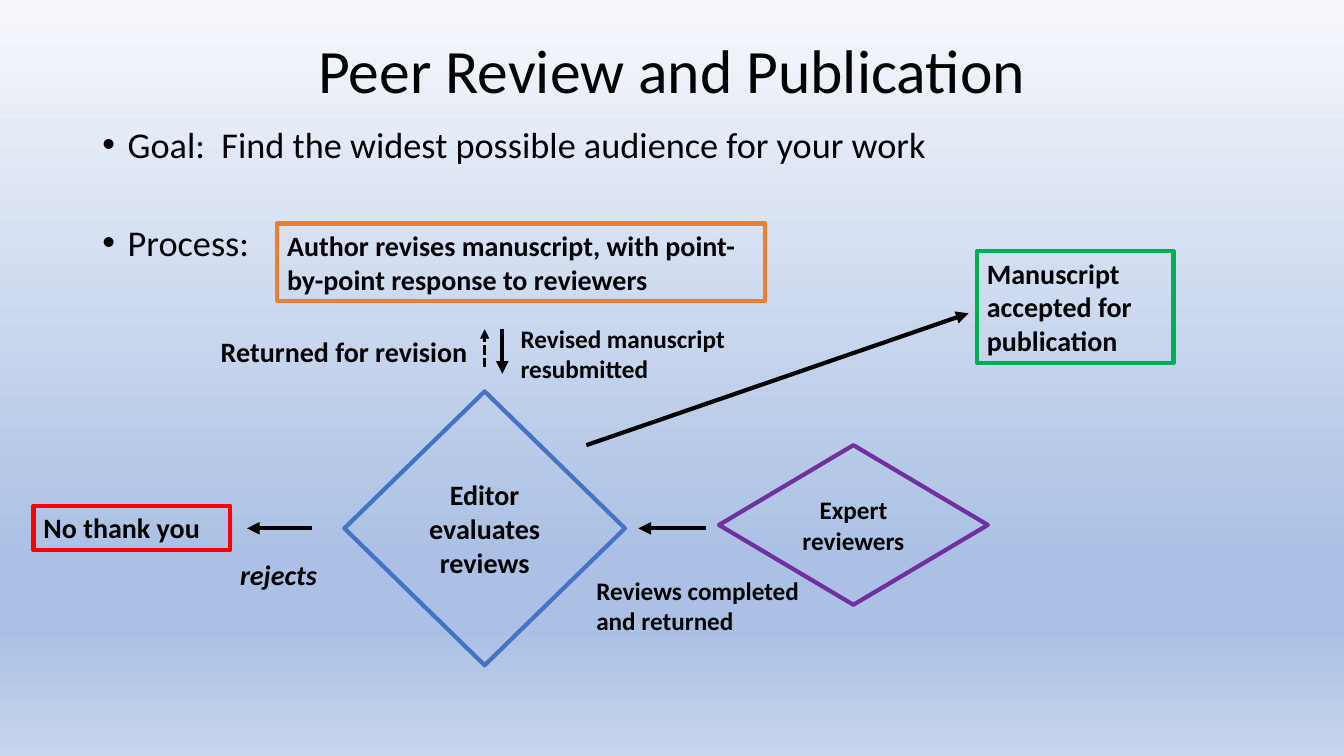
from copy import deepcopy

from lxml import etree
from pptx import Presentation
from pptx import util as u
from pptx.dml.color import RGBColor
from pptx.enum import dml, shapes, text
from pptx.oxml.ns import qn

FONT = "Calibri"
COLOURS = {
    "ink": "000000", "author": "ED7D31", "editor": "4472C4",
    "reject": "FF0000", "expert": "7030A0", "accept": "00B050",
}
SKY = [(0, "F6F8FC"), (0.74, "ABC0E4"), (0.83, "ABC0E4"), (1, "C7D5ED")]
COLUMNS, ROWS = 160, 90
SLIDE_WIDTH, SLIDE_HEIGHT = u.Inches(13.33), u.Inches(7.5)

RECT, DIAMOND = shapes.MSO_SHAPE.RECTANGLE, shapes.MSO_SHAPE.DIAMOND
STEPS = [
    (RECT, "author", 20, (33, 0.6, 58.1, 9.2),
     "Author revises manuscript, with point-by-point response to reviewers"),
    (DIAMOND, "editor", 20, (41, 20.6, 33.4, 32.6), "Editor evaluates reviews"),
    (RECT, "reject", 20, (4, 34.2, 23.4, 5.3), "No thank you"),
    (DIAMOND, "expert", 18, (85.6, 27, 32, 19), "Expert reviewers"),
    (RECT, "accept", 20, (116.3, 3.9, 23.4, 13.3),
     "Manuscript accepted for publication"),
]
LABELS = [
    ("rejects", 20, True, False, (27.4, 39.8, 11.6, 5.3)),
    ("Reviews completed and returned", 18, False, True, (69.8, 41.9, 29.9, 8.5)),
    ("Returned for revision", 20, False, False, (25.1, 13.2, 32, 5.3)),
    ("Revised manuscript\nresubmitted", 18, False, False, (60.8, 11.9, 26.9, 8.5)),
]
ARROWS = [
    ((57.7, 17.7), (57.7, 13.2), True),
    ((37.1, 36.9), (29.4, 36.9), False),
    ((84, 36.9), (76, 36.9), False),
    ((69.8, 27), (115.3, 11.3), False),
    ((59.8, 13.2), (59.8, 18.5), False),
]


def colour(name):
    """Return the named colour."""
    return RGBColor.from_string(COLOURS[name])


def cells(column, row):
    """Turn a grid position into slide lengths."""
    return round(SLIDE_WIDTH * column / COLUMNS), round(SLIDE_HEIGHT * row / ROWS)


def placed(box, part):
    """Return the slide lengths of a part inside a grid box."""
    left, top, width, height = part
    return *cells(box[0] + left, box[1] + top), *cells(width, height)


def style(frame, size, bold=False, italic=False, align=None):
    """Format every run of a text frame."""
    for paragraph in frame.paragraphs:
        paragraph.alignment = align
        for run in paragraph.runs:
            run.font.name, run.font.size = FONT, u.Pt(size)
            run.font.bold, run.font.italic = bold, italic
            run.font.color.rgb = colour("ink")


def paint_background(slide):
    """Fill the slide with the vertical sky gradient."""
    fill = slide.background.fill
    fill.gradient()
    fill.gradient_angle = 270
    stop_list = next(slide.element.iter(qn("a:gsLst")))
    while len(stop_list) < len(SKY):
        stop_list.append(deepcopy(stop_list[0]))
    for stop, (position, shade) in zip(fill.gradient_stops, SKY):
        stop.position = position
        stop.color.rgb = RGBColor.from_string(shade)


def fill_title(slide, box):
    """Set the slide title in its box."""
    title = slide.shapes.title
    title.left, title.top, title.width, title.height = placed(box, (0, 0, *box[2:]))
    frame = title.text_frame
    frame.text = "Peer Review and Publication"
    frame.vertical_anchor = text.MSO_ANCHOR.MIDDLE
    frame.auto_size = text.MSO_AUTO_SIZE.NONE
    style(frame, 44, align=text.PP_ALIGN.CENTER)
    frame.paragraphs[0].line_spacing = 0.9


def fill_points(slide, box):
    """Set the bulleted goal and process in their box."""
    points = slide.placeholders[1]
    points.left, points.top, points.width, points.height = placed(box, (0, 0, *box[2:]))
    frame = points.text_frame
    frame.text = "Goal:  Find the widest possible audience for your work\nProcess:"
    frame.auto_size = text.MSO_AUTO_SIZE.NONE
    style(frame, 25.9, align=text.PP_ALIGN.LEFT)
    for paragraph, gap in zip(frame.paragraphs, (10, 45)):
        paragraph.line_spacing = 0.8
        paragraph.space_before = u.Pt(gap)
        properties = paragraph._p.get_or_add_pPr()
        properties.set("marL", str(u.Inches(0.25)))
        properties.set("indent", str(-u.Inches(0.25)))


def add_step(slide, box, outline, role, size, part, words):
    """Add one outlined step of the review process."""
    step = slide.shapes.add_shape(outline, *placed(box, part))
    step.shadow.inherit = False
    step.fill.background()
    step.line.color.rgb = colour(role)
    step.line.width = u.Pt(3)
    frame = step.text_frame
    frame.text = words
    frame.word_wrap = True
    is_diamond = outline == DIAMOND
    frame.vertical_anchor = text.MSO_ANCHOR.MIDDLE if is_diamond else text.MSO_ANCHOR.TOP
    style(frame, size, bold=True,
          align=text.PP_ALIGN.CENTER if is_diamond else text.PP_ALIGN.LEFT)


def add_label(slide, box, words, size, italic, wraps, part):
    """Add a label beside an arrow."""
    label = slide.shapes.add_textbox(*placed(box, part))
    label.text_frame.text = words
    label.text_frame.word_wrap = wraps
    style(label.text_frame, size, bold=True, italic=italic)


def add_arrow(slide, box, start, end, dashed):
    """Add an arrow between two points of the grid box."""
    ends = [cells(box[0] + column, box[1] + row) for column, row in (start, end)]
    arrow = slide.shapes.add_connector(shapes.MSO_CONNECTOR.STRAIGHT, *ends[0], *ends[1])
    arrow.line.color.rgb = colour("ink")
    arrow.line.width = u.Pt(2.25 if dashed else 3)
    if dashed:
        arrow.line.dash_style = dml.MSO_LINE.SQUARE_DOT
    properties = arrow._element.spPr
    etree.SubElement(properties.find(qn("a:ln")), qn("a:tailEnd"), type="triangle")
    etree.SubElement(properties, qn("a:effectLst"))


def draw_process(slide, box):
    """Draw the steps, labels and arrows of the review process."""
    for step in STEPS:
        add_step(slide, box, *step)
    for label in LABELS:
        add_label(slide, box, *label)
    for arrow in ARROWS:
        add_arrow(slide, box, *arrow)


def main():
    """Build and save the slide."""
    deck = Presentation()
    deck.slide_width, deck.slide_height = SLIDE_WIDTH, SLIDE_HEIGHT
    slide = deck.slides.add_slide(deck.slide_layouts[1])
    paint_background(slide)
    fill_title(slide, (11, 0, 138, 17.4))
    fill_points(slide, (11, 15, 138, 17.9))
    draw_process(slide, (0, 26, 160, 54))
    deck.save("out.pptx")


if __name__ == "__main__":
    main()
